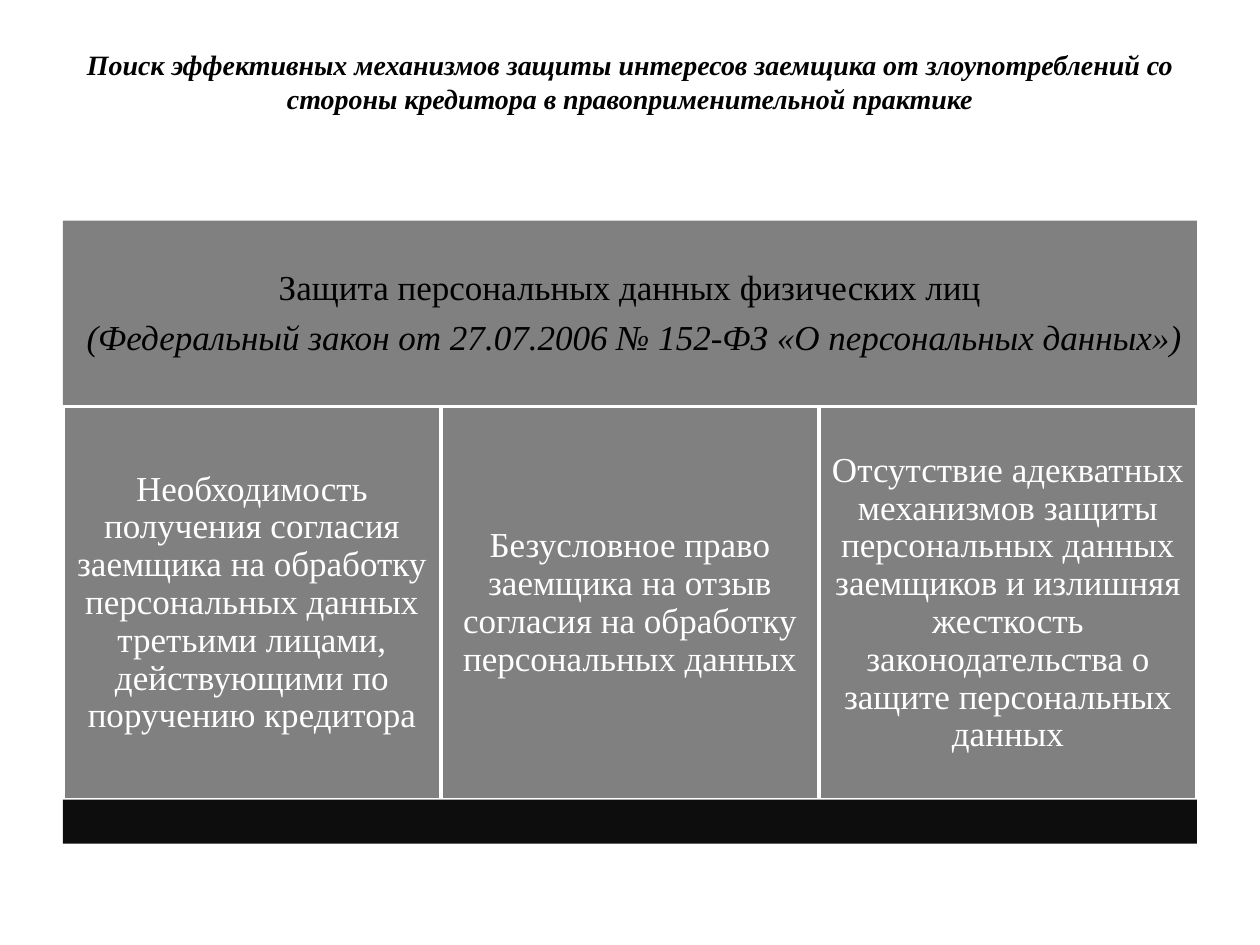
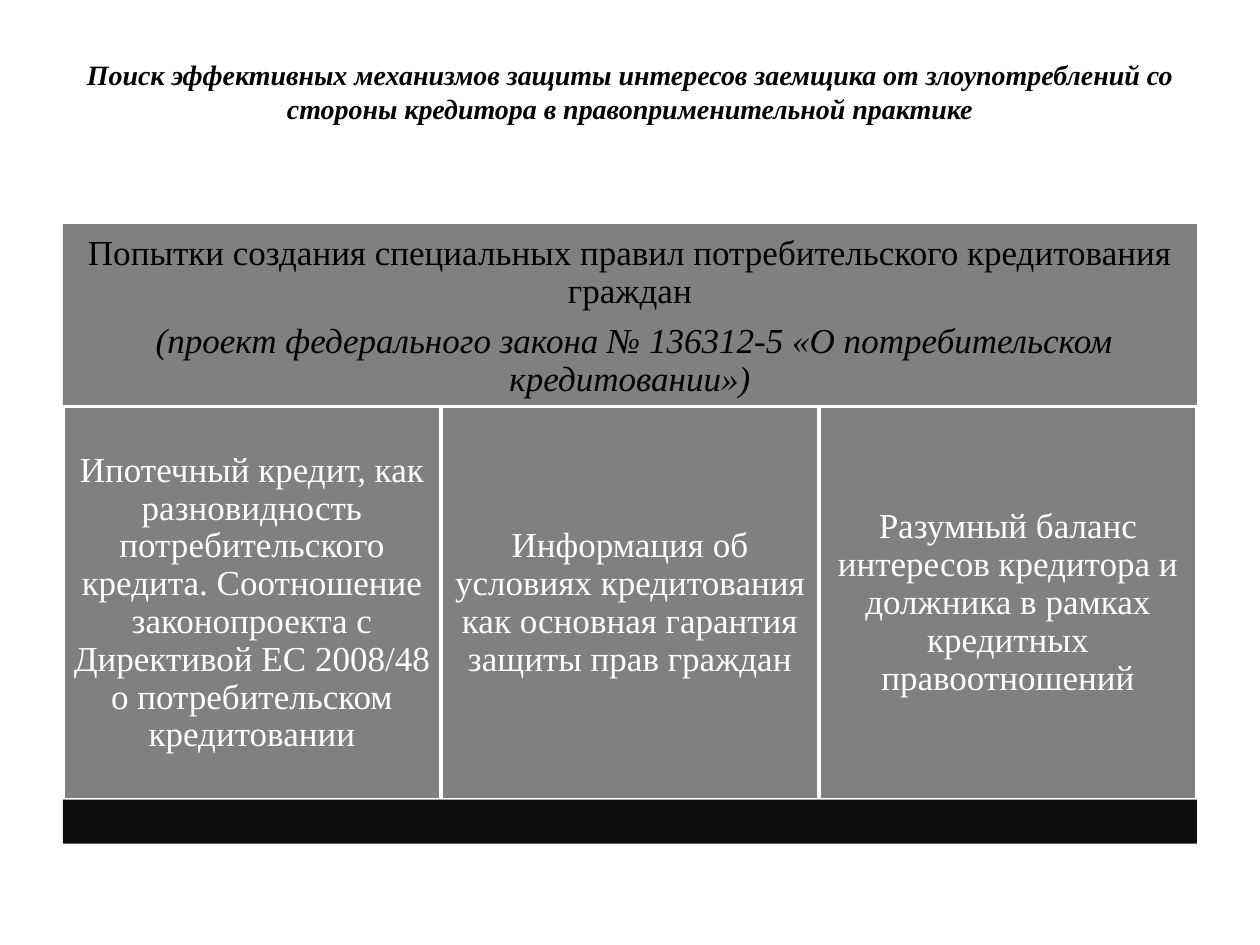
import pptx
import pptx.util
import pptx.dml.color
import pptx.enum.shapes
import pptx.enum.text

Cm, Pt = pptx.util.Cm, pptx.util.Pt

# Content
TITLE = ("Поиск эффективных механизмов защиты интересов заемщика от злоупотреблений "
         "со стороны кредитора в правоприменительной практике")
SLIDES = [
    {"title_height": 1.75, "header_top": 4.45,
     "topic": "Защита персональных данных физических лиц",
     "law": " (Федеральный закон от 27.07.2006 № 152-ФЗ «О персональных данных»)",
     "columns": [
         "Необходимость получения согласия заемщика на обработку персональных данных "
         "третьими лицами, действующими по поручению кредитора",
         "Безусловное право заемщика на отзыв согласия на обработку персональных данных",
         "Отсутствие адекватных механизмов защиты персональных данных заемщиков и "
         "излишняя жесткость законодательства о защите персональных данных"]},
    {"title_height": 2.16, "header_top": 4.52,
     "topic": "Попытки создания специальных правил потребительского кредитования граждан",
     "law": " (проект федерального закона № 136312-5 «О потребительском кредитовании»)",
     "columns": [
         "Ипотечный кредит, как разновидность потребительского кредита. Соотношение "
         "законопроекта с Директивой ЕС 2008/48 о потребительском кредитовании",
         "Информация об условиях кредитования как основная гарантия защиты прав граждан",
         "Разумный баланс интересов кредитора и должника в рамках кредитных "
         "правоотношений"]},
]

# Shared style and layout, lengths in centimetres
FONT = "Times New Roman"
BLACK, WHITE, GREY, BASE = "000000", "FFFFFF", "808080", "0D0D0D"
LEFT, WIDTH = 1.27, 22.86
TITLE_TOP, HEADER_HEIGHT = 0.76, 3.76
COLUMN_TOP, COLUMN_HEIGHT = 8.2, 7.92
BASE_HEIGHT = 0.89


def rgb(value):
    return pptx.dml.color.RGBColor.from_string(value)


def setup_frame(tf, inset_x=0.2, inset_y=0.2):
    tf.word_wrap = True
    tf.vertical_anchor = pptx.enum.text.MSO_ANCHOR.MIDDLE
    tf.margin_left = tf.margin_right = Cm(inset_x)
    tf.margin_top = tf.margin_bottom = Cm(inset_y)


def add_text(tf, text, size=20, color=WHITE, bold=False, italic=False,
             spacing=0.9, before=0):
    """Fill the empty first paragraph, or append a new one."""
    p = tf.add_paragraph() if tf.text else tf.paragraphs[0]
    p.alignment = pptx.enum.text.PP_ALIGN.CENTER
    p.line_spacing = spacing
    p.space_before = Pt(before)
    r = p.add_run()
    r.text = text
    r.font.name, r.font.size = FONT, Pt(size)
    r.font.bold, r.font.italic = bold, italic
    r.font.color.rgb = rgb(color)


def add_block(s, left, top, width, height, fill, line=None):
    sp = s.shapes.add_shape(pptx.enum.shapes.MSO_SHAPE.RECTANGLE,
                            Cm(left), Cm(top), Cm(width), Cm(height))
    sp.shadow.inherit = False
    sp.fill.solid()
    sp.fill.fore_color.rgb = rgb(fill)
    if line:
        sp.line.color.rgb = rgb(line)
        sp.line.width = Pt(2)
    else:
        sp.line.fill.background()
    setup_frame(sp.text_frame)
    return sp.text_frame


def build_slide(prs, data):
    s = prs.slides.add_slide(prs.slide_layouts[6])

    # Title
    box = s.shapes.add_textbox(Cm(LEFT), Cm(TITLE_TOP), Cm(WIDTH), Cm(data["title_height"]))
    setup_frame(box.text_frame, 0.25, 0.13)
    add_text(box.text_frame, TITLE, size=16, color=BLACK, bold=True, italic=True, spacing=1.0)

    # Header with topic and law
    tf = add_block(s, LEFT, data["header_top"], WIDTH, HEADER_HEIGHT, GREY)
    add_text(tf, data["topic"], color=BLACK)
    add_text(tf, data["law"], color=BLACK, italic=True, before=7)

    # Equal columns
    column_width = WIDTH / len(data["columns"])
    for i, text in enumerate(data["columns"]):
        tf = add_block(s, LEFT + i * column_width, COLUMN_TOP,
                       column_width, COLUMN_HEIGHT, GREY, line=WHITE)
        add_text(tf, text)

    # Dark base under the columns
    add_block(s, LEFT, COLUMN_TOP + COLUMN_HEIGHT, WIDTH, BASE_HEIGHT, BASE)


def main():
    prs = pptx.Presentation()
    prs.slide_width, prs.slide_height = Cm(25.4), Cm(19.05)
    for data in SLIDES:
        build_slide(prs, data)
    prs.save("out.pptx")


if __name__ == "__main__":
    main()
